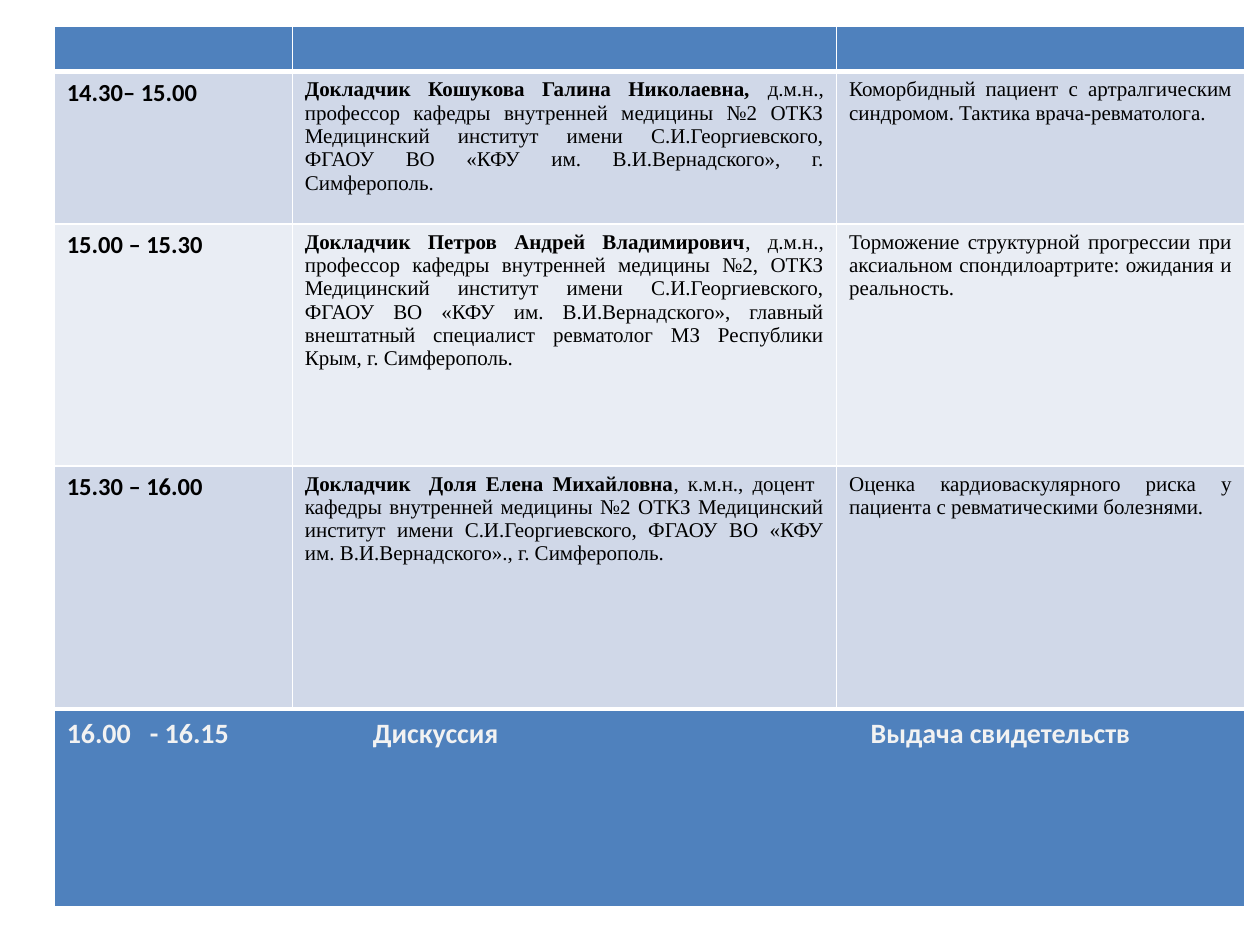
"""Build the closing part of a conference programme as a schedule slide."""
import pptx
import pptx.dml.color
import pptx.enum.text
import pptx.oxml.ns
import pptx.util
from lxml import etree

BLUE = pptx.dml.color.RGBColor(0x4F, 0x81, 0xBD)
BAND = pptx.dml.color.RGBColor(0xD0, 0xD8, 0xE8)
PALE = pptx.dml.color.RGBColor(0xE9, 0xED, 0xF4)
BLACK = pptx.dml.color.RGBColor(0, 0, 0)
WHITE = pptx.dml.color.RGBColor(255, 255, 255)
LIGHT = pptx.dml.color.RGBColor(0xF2, 0xF2, 0xF2)

LEFT = 4.3
COLUMNS = [18.9, 43.2, 32.4]
ROWS = [4.8, 16.13, 25.6, 25.6]
TALKS = [
    ("14.30– 15.00",
     "Докладчик Кошукова Галина Николаевна, ",
     "д.м.н., профессор кафедры внутренней медицины №2 ОТКЗ Медицинский институт "
     "имени С.И.Георгиевского, ФГАОУ ВО «КФУ им. В.И.Вернадского», г. Симферополь.",
     "Коморбидный пациент с артралгическим синдромом. Тактика врача-ревматолога."),
    ("15.00 – 15.30",
     "Докладчик Петров Андрей Владимирович",
     ", д.м.н., профессор кафедры внутренней медицины №2, ОТКЗ Медицинский институт "
     "имени С.И.Георгиевского, ФГАОУ ВО «КФУ им. В.И.Вернадского», главный внештатный "
     "специалист ревматолог МЗ Республики Крым, г. Симферополь.",
     "Торможение структурной прогрессии при аксиальном спондилоартрите: "
     "ожидания и реальность."),
    ("15.30 – 16.00",
     "Докладчик  Доля Елена Михайловна",
     ", к.м.н., доцент  кафедры внутренней медицины №2 ОТКЗ Медицинский институт "
     "имени С.И.Георгиевского, ФГАОУ ВО «КФУ им. В.И.Вернадского»., г. Симферополь.",
     "Оценка кардиоваскулярного риска у пациента с ревматическими болезнями."),
]
CLOSING = "16.00\t- 16.15\tДискуссия\tВыдача свидетельств"
CLOSING_TABS = [6.6, 24.3, 63.8]


class Schedule:
    """Hold the slide and its style; lengths are percentages of the slide."""

    def __init__(self, prs):
        """Add a blank slide to the presentation."""
        self.prs = prs
        self.s = prs.slides.add_slide(prs.slide_layouts[6])

    def x(self, share):
        """Return a share of the slide width."""
        return pptx.util.Emu(round(self.prs.slide_width * share / 100))

    def y(self, share):
        """Return a share of the slide height."""
        return pptx.util.Emu(round(self.prs.slide_height * share / 100))

    def table(self, top, columns, rows):
        """Add a plain table with the given column and row shares."""
        frame = self.s.shapes.add_table(
            len(rows), len(columns), self.x(LEFT), self.y(top),
            self.x(sum(columns)), self.y(sum(rows)))
        table = frame.table
        table.first_row = table.horz_banding = False
        for column, share in zip(table.columns, columns):
            column.width = self.x(share)
        for row, share in zip(table.rows, rows):
            row.height = self.y(share)
        return table

    def cell(self, cell, fill, bottom=1):
        """Fill a cell and give it white borders."""
        cell.fill.solid()
        cell.fill.fore_color.rgb = fill
        tc_pr = cell._tc.get_or_add_tcPr()
        for i, (side, width) in enumerate(zip("LRTB", (1, 1, 1, bottom))):
            ln = etree.Element(pptx.oxml.ns.qn("a:ln" + side), w=str(pptx.util.Pt(width)))
            solid = etree.SubElement(ln, pptx.oxml.ns.qn("a:solidFill"))
            etree.SubElement(solid, pptx.oxml.ns.qn("a:srgbClr"), val=str(WHITE))
            tc_pr.insert(i, ln)

    def text(self, cell, runs, font, size, color=BLACK, justify=False):
        """Write (text, bold) runs into the first paragraph of a cell."""
        p = cell.text_frame.paragraphs[0]
        if justify:
            p.alignment = pptx.enum.text.PP_ALIGN.JUSTIFY
        for text, bold in runs:
            r = p.add_run()
            r.text = text
            r.font.name, r.font.size, r.font.bold = font, pptx.util.Pt(size), bold
            r.font.color.rgb = color
        return p

    def tabs(self, p, shares):
        """Set left tab stops on a paragraph."""
        tab_list = etree.SubElement(p._p.get_or_add_pPr(), pptx.oxml.ns.qn("a:tabLst"))
        for share in shares:
            etree.SubElement(tab_list, pptx.oxml.ns.qn("a:tab"),
                             pos=str(self.x(share)), algn="l")

    def talks(self):
        """Add the table of talks under an empty header row."""
        table = self.table(2.8, COLUMNS, ROWS)
        for cell in table.rows[0].cells:
            self.cell(cell, BLUE, bottom=3)
            cell.margin_top = cell.margin_bottom = 0
        for i, (time, speaker, post, topic) in enumerate(TALKS, 1):
            cells = list(table.rows[i].cells)
            for cell in cells:
                self.cell(cell, BAND if i % 2 else PALE)
            self.text(cells[0], [(time, True)], "Calibri", 14)
            for cell, runs in ((cells[1], [(speaker, True), (post, False)]),
                               (cells[2], [(topic, False)])):
                self.text(cell, runs, "Times New Roman", 12, justify=True)

    def closing(self):
        """Add the closing row of the programme."""
        cell = self.table(75.2, [sum(COLUMNS)], [20.93]).cell(0, 0)
        self.cell(cell, BLUE, bottom=3)
        p = self.text(cell, [(CLOSING, True)], "Calibri", 16, LIGHT)
        self.tabs(p, CLOSING_TABS)


def main():
    """Build and save the slide."""
    prs = pptx.Presentation()
    prs.slide_width, prs.slide_height = pptx.util.Inches(10), pptx.util.Inches(7.5)
    schedule = Schedule(prs)
    schedule.talks()
    schedule.closing()
    prs.save("out.pptx")


if __name__ == "__main__":
    main()
